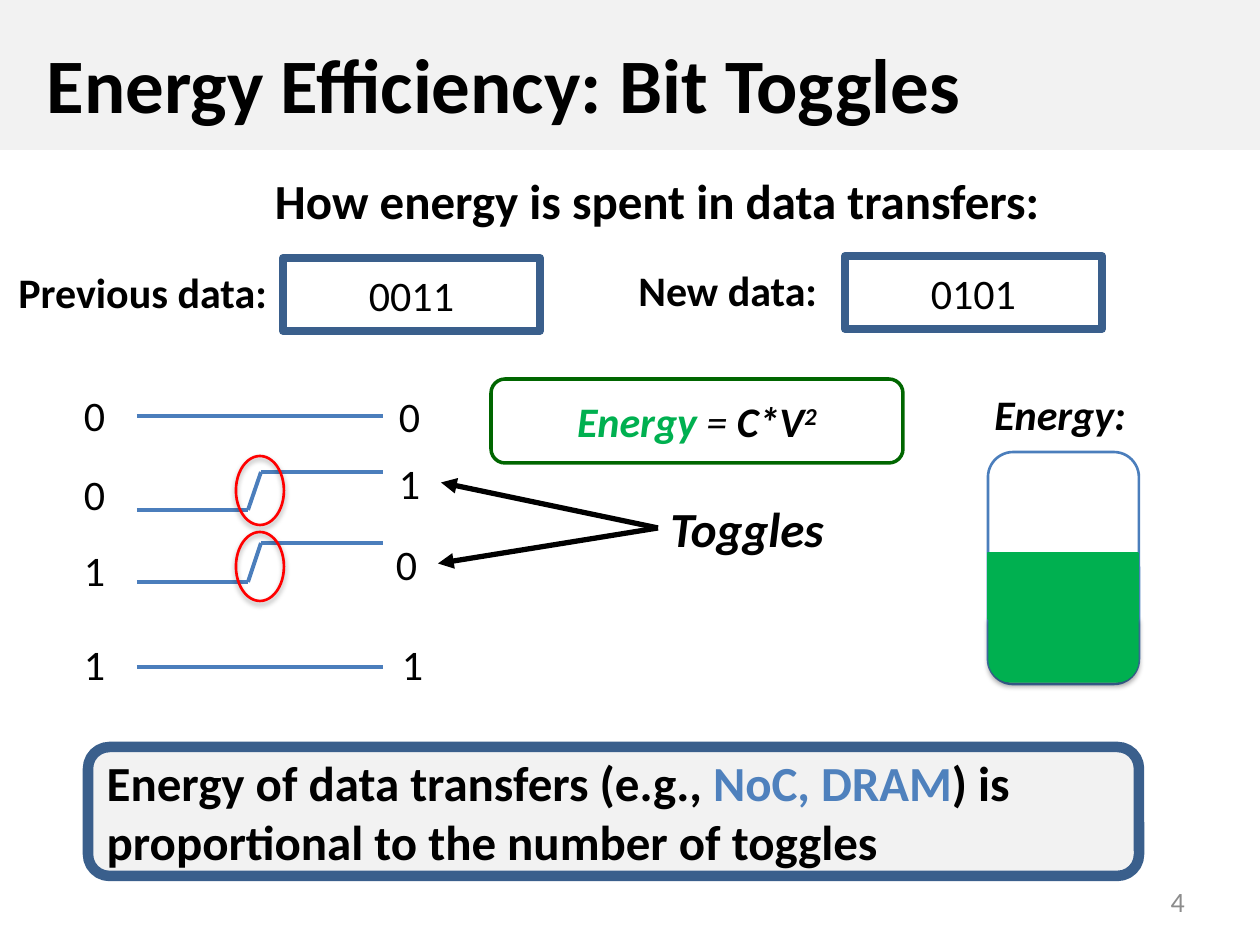
import pptx
import pptx.util
import pptx.oxml
from pptx.dml.color import RGBColor
from pptx.enum.shapes import MSO_CONNECTOR, MSO_SHAPE
from pptx.enum.text import MSO_ANCHOR, MSO_AUTO_SIZE, PP_ALIGN
from pptx.oxml.ns import nsdecls, qn

PX = 914400 / 126
FONT = "Calibri"
BLACK = RGBColor(0x00, 0x00, 0x00)
GRAY = RGBColor(0x8C, 0x8C, 0x8C)
PALE = RGBColor(0xF2, 0xF2, 0xF2)
BLUE = RGBColor(0x4F, 0x81, 0xBD)
WIRE = RGBColor(0x4B, 0x7E, 0xBC)
NAVY = RGBColor(0x3A, 0x5F, 0x8C)
GREEN = RGBColor(0x00, 0xB0, 0x50)
DARK_GREEN = RGBColor(0x00, 0x66, 0x00)
RED = RGBColor(0xFF, 0x00, 0x00)


def emu(*lengths):
    return [round(length * PX) for length in lengths]


def write_text(shape, text, size=24, color=BLACK, bold=False, italic=False,
               align=PP_ALIGN.LEFT, anchor=MSO_ANCHOR.MIDDLE, wrap=True):
    """Fill a shape with a string, or with (string, overrides) runs."""
    frame = shape.text_frame
    frame.word_wrap = wrap
    frame.vertical_anchor = anchor
    paragraph = frame.paragraphs[0]
    paragraph.alignment = align
    runs = [(text, {})] if isinstance(text, str) else text
    for words, changes in runs:
        run = paragraph.add_run()
        run.text = words
        font = run.font
        font.name = FONT
        font.size = pptx.util.Pt(size)
        font.bold = changes.get("bold", bold)
        font.italic = italic
        font.color.rgb = changes.get("color", color)
        if changes.get("superscript"):
            font._element.set("baseline", "30000")


def add_label(slide, box, text, fit=False, **style):
    label = slide.shapes.add_textbox(*emu(*box))
    if fit:
        style.setdefault("anchor", MSO_ANCHOR.TOP)
    write_text(label, text, **style)
    if fit:
        label.text_frame.auto_size = MSO_AUTO_SIZE.SHAPE_TO_FIT_TEXT
    return label


def add_box(slide, kind, box, fill=None, line=None, width=1.0):
    shape = slide.shapes.add_shape(kind, *emu(*box))
    shape.shadow.inherit = False
    if fill is None:
        shape.fill.background()
    else:
        shape.fill.solid()
        shape.fill.fore_color.rgb = fill
    if line is None:
        shape.line.fill.background()
    else:
        shape.line.color.rgb = line
        shape.line.width = pptx.util.Pt(width)
    return shape


def add_soft_shadow(shape):
    properties = shape.element.spPr
    properties.remove(properties.find(qn("a:effectLst")))
    properties.append(pptx.oxml.parse_xml(
        f'<a:effectLst {nsdecls("a")}>'
        '<a:outerShdw blurRad="39370" dist="22860" dir="5400000" rotWithShape="0">'
        '<a:srgbClr val="000000"><a:alpha val="35000"/></a:srgbClr>'
        '</a:outerShdw></a:effectLst>'))


def add_line(slide, start, end, color=WIRE, width=2.25, arrow=False):
    line = slide.shapes.add_connector(MSO_CONNECTOR.STRAIGHT, *emu(*start, *end))
    line.line.color.rgb = color
    line.line.width = pptx.util.Pt(width)
    if arrow:
        line.line._get_or_add_ln().append(pptx.oxml.parse_xml(
            f'<a:tailEnd {nsdecls("a")} type="triangle"/>'))
    line._element.spPr.append(pptx.oxml.parse_xml(f'<a:effectLst {nsdecls("a")}/>'))
    return line


def add_header(slide, box):
    left, top, width, height = box
    band = add_box(slide, MSO_SHAPE.RECTANGLE, box, fill=PALE)
    title = slide.shapes.title
    title.left, title.top, title.width, title.height = emu(
        left + 34, top + 27, width - 126, height - 38)
    write_text(title, "Energy Efficiency: Bit Toggles", size=44, bold=True)
    band.element.addnext(title.element)


def add_data_word(slide, box, caption, caption_width, bits):
    """Put a caption at the left end of the box and a framed word at its right."""
    left, top, width, height = box
    add_label(slide, (left, top + 2, caption_width, 63), caption,
              fit=True, bold=True, wrap=False)
    word = add_box(slide, MSO_SHAPE.RECTANGLE, (left + width - 257, top, 257, height),
                   line=NAVY, width=4.5)
    write_text(word, bits, align=PP_ALIGN.CENTER)


def add_wires(slide, box):
    """Draw four wires with old and new bits; return the new-bit labels."""
    left, top, width, height = box
    for bit, offset in zip("0011", (0, 79, 155, 249)):
        add_label(slide, (left, top + offset, 63, 73), bit, align=PP_ALIGN.CENTER)
    new_labels = [
        add_label(slide, (left + x, top + y, 63, 73), bit, align=PP_ALIGN.CENTER)
        for bit, x, y in (("0", 315, 1), ("1", 315, 68), ("0", 312, 149), ("1", 318, 249))]

    start, rise, crest, end = left + 74, left + 185, left + 198, left + 320
    for offset in (38, 289):
        add_line(slide, (start, top + offset), (end, top + offset))
    for low, high, ring_top in ((132, 94, 78), (204, 165, 154)):
        points = [(start, top + low), (rise, top + low),
                  (crest, top + high), (end, top + high)]
        for first, second in zip(points, points[1:]):
            add_line(slide, first, second)
        ring = add_box(slide, MSO_SHAPE.OVAL, (left + 173, top + ring_top, 48, 69),
                       line=RED, width=1.5)
        add_soft_shadow(ring)
    return new_labels


def add_toggles(slide, box, toggled_labels):
    caption = add_label(slide, box, "Toggles", fit=True, size=28,
                        bold=True, italic=True, wrap=False)
    for label in toggled_labels:
        arrow = add_line(slide, (0, 0), (1, 1), color=BLACK, width=3, arrow=True)
        arrow.begin_connect(caption, 1)
        arrow.end_connect(label, 3)


def add_formula(slide, box):
    frame = add_box(slide, MSO_SHAPE.ROUNDED_RECTANGLE, box, line=DARK_GREEN, width=2)
    write_text(frame, [("Energy", {"color": GREEN}), (" = ", {"bold": False}),
                       ("C*V", {}), ("2", {"superscript": True})],
               bold=True, italic=True, align=PP_ALIGN.CENTER)


def add_energy_tank(slide, box):
    left, top, width, height = box
    add_label(slide, (left - 6, top, 164, 63), "Energy:", fit=True,
              bold=True, italic=True, wrap=False)
    add_box(slide, MSO_SHAPE.ROUNDED_RECTANGLE, (left, top + 70, width, height - 70),
            line=WIRE, width=1.5)
    bottom = add_box(slide, MSO_SHAPE.ROUND_2_SAME_RECTANGLE,
                     (left + 1, top + 236, width - 2, 64),
                     fill=GREEN, line=GREEN, width=0.75)
    bottom.rotation = 180
    bottom.adjustments[0] = 0.34
    add_soft_shadow(bottom)
    add_box(slide, MSO_SHAPE.RECTANGLE, (left, top + 171, width - 1, 66),
            fill=GREEN, line=GREEN, width=0.75)


def add_conclusion(slide, box):
    panel = add_box(slide, MSO_SHAPE.ROUNDED_RECTANGLE, box, fill=PALE, line=NAVY, width=6)
    write_text(panel, [("Energy of data transfers (e.g., ", {}),
                       ("NoC, DRAM", {"color": BLUE}),
                       (") is proportional to the number of toggles", {})],
               size=28, bold=True)


def main():
    presentation = pptx.Presentation()
    presentation.slide_width, presentation.slide_height = emu(1260, 945)
    slide = presentation.slides.add_slide(presentation.slide_layouts[5])

    add_header(slide, (0, 0, 1260, 150))
    add_label(slide, (54, 164, 1206, 72), "How energy is spent in data transfers:",
              fit=True, size=28, bold=True, align=PP_ALIGN.CENTER)
    add_data_word(slide, (6, 258, 534, 73), "Previous data:", 280, "0011")
    add_data_word(slide, (626, 256, 476, 73), "New data:", 208, "0101")
    new_labels = add_wires(slide, (63, 378, 381, 322))
    add_toggles(slide, (658, 492, 184, 72), new_labels[1:3])
    add_formula(slide, (491, 379, 412, 84))
    add_energy_tank(slide, (988, 382, 151, 302))
    add_conclusion(slide, (88, 747, 1051, 129))
    add_label(slide, (903, 876, 294, 50), "4", size=16, color=GRAY, align=PP_ALIGN.RIGHT)

    presentation.save("out.pptx")


if __name__ == "__main__":
    main()
